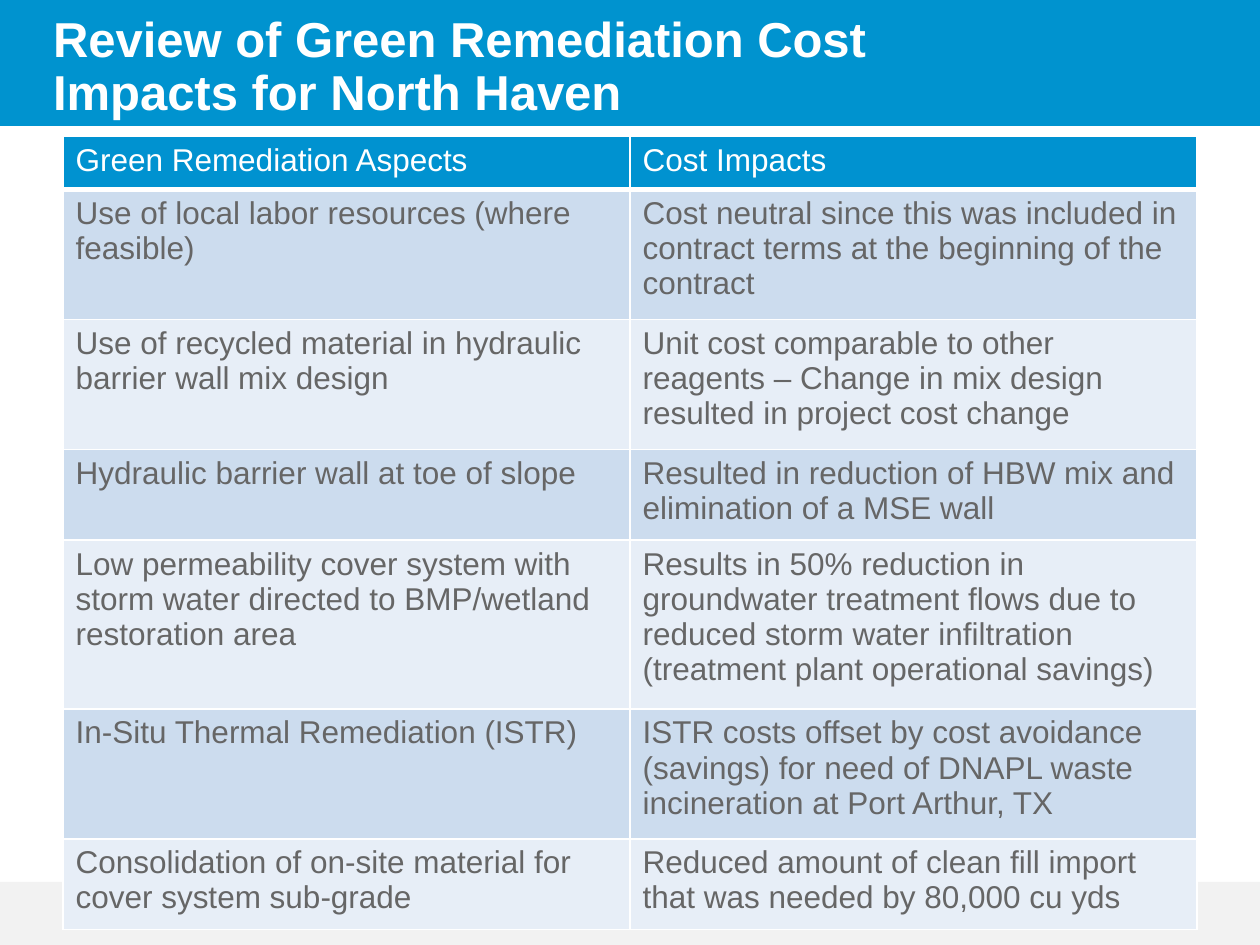
import pptx
import pptx.util
import pptx.dml.color
import pptx.enum.shapes
import pptx.enum.text
import pptx.oxml
import pptx.oxml.ns

Cm = pptx.util.Cm
Pt = pptx.util.Pt
WIDE, HIGH = 25.4, 19.05
BLUE, WHITE, GREY = "0093CF", "FFFFFF", "666666"
HEAD, DARK, PALE = "0092D0", "CCDCEE", "E7EEF7"

# Row height in cm, aspect, cost impact
ROWS = [
    (1.07, "Green Remediation Aspects", "Cost Impacts"),
    (2.62, "Use of local labor resources (where feasible)",
     "Cost neutral since this was included in contract terms at the beginning of the contract"),
    (2.62, "Use of recycled material in hydraulic barrier wall mix design",
     "Unit cost comparable to other reagents – Change in mix design resulted in project cost change"),
    (1.83, "Hydraulic barrier wall at toe of slope",
     "Resulted in reduction of HBW mix and elimination of a MSE wall"),
    (3.4, "Low permeability cover system with storm water directed to BMP/wetland restoration area",
     "Results in 50% reduction in groundwater treatment flows due to reduced storm water "
     "infiltration (treatment plant operational savings)"),
    (2.62, "In-Situ Thermal Remediation (ISTR)",
     "ISTR costs offset by cost avoidance (savings) for need of DNAPL waste "
     "incineration at Port Arthur, TX"),
    (1.83, "Consolidation of on-site material for cover system sub-grade",
     "Reduced amount of clean fill import that was needed by 80,000 cu yds"),
]


def paint(fill, tone):
    fill.solid()
    fill.fore_color.rgb = pptx.dml.color.RGBColor.from_string(tone)


def style(item, form):
    for name, value in form.items():
        setattr(item, name, value)


def write(para, text, size, tone, bold=False):
    para.text = text
    font = para.runs[0].font
    style(font, {"name": "Arial", "size": Pt(size), "bold": bold})
    paint(font.fill, tone)


def band(slide, box, tone):
    kind = pptx.enum.shapes.MSO_SHAPE.RECTANGLE
    bar = slide.shapes.add_shape(kind, *map(Cm, box))
    bar.shadow.inherit = False
    bar.line.fill.background()
    paint(bar.fill, tone)


def banner(slide, box, text):
    left, top, width, height = box
    band(slide, box, BLUE)
    title = slide.shapes.title
    style(title, {"left": Cm(left + 1.07), "top": Cm(top),
                  "width": Cm(16.51), "height": Cm(height + 0.2)})
    frame = title.text_frame
    style(frame, {"margin_left": 0, "margin_right": 0, "margin_top": 0,
                  "margin_bottom": 0, "word_wrap": True,
                  "auto_size": pptx.enum.text.MSO_AUTO_SIZE.NONE,
                  "vertical_anchor": pptx.enum.text.MSO_ANCHOR.MIDDLE})
    para = frame.paragraphs[0]
    style(para, {"line_spacing": 0.9, "alignment": pptx.enum.text.PP_ALIGN.LEFT})
    write(para, text, 28, WHITE, True)
    # Bring the title in front of its band
    slide.shapes._spTree.append(title._element)


def edge(cell, side, width):
    space = pptx.oxml.ns.nsdecls("a")
    cell._tc.get_or_add_tcPr().append(pptx.oxml.parse_xml(
        f'<a:ln{side} {space} w="{Pt(width)}"><a:solidFill>'
        f'<a:srgbClr val="{WHITE}"/></a:solidFill></a:ln{side}>'))


def grid(slide, box, rows):
    left, top, width = box
    high = sum(row[0] for row in rows)
    frame = slide.shapes.add_table(len(rows), 2, *map(Cm, (left, top, width, high)))
    table = frame.table
    for col in table.columns:
        col.width = Cm(width / 2)
    for i, (tall, *texts) in enumerate(rows):
        table.rows[i].height = Cm(tall)
        tone = HEAD if i == 0 else (PALE, DARK)[i % 2]
        for j, text in enumerate(texts):
            cell = table.cell(i, j)
            # Thick rule between the header and the body
            for side in "LRTB":
                edge(cell, side, 3 if (i, side) in ((0, "B"), (1, "T")) else 1)
            paint(cell.fill, tone)
            write(cell.text_frame.paragraphs[0], text, 18, GREY if i else WHITE)


def main():
    deck = pptx.Presentation()
    style(deck, {"slide_width": Cm(WIDE), "slide_height": Cm(HIGH)})
    slide = deck.slides.add_slide(deck.slide_layouts[5])
    banner(slide, (0, 0, WIDE, 2.54),
           "Review of Green Remediation Cost Impacts for North Haven")
    # Footer strip, then the table over it
    band(slide, (0, HIGH - 1.27, WIDE, 1.27), "F2F2F2")
    grid(slide, (1.27, 2.75, 22.86), ROWS)
    deck.save("out.pptx")


if __name__ == "__main__":
    main()
